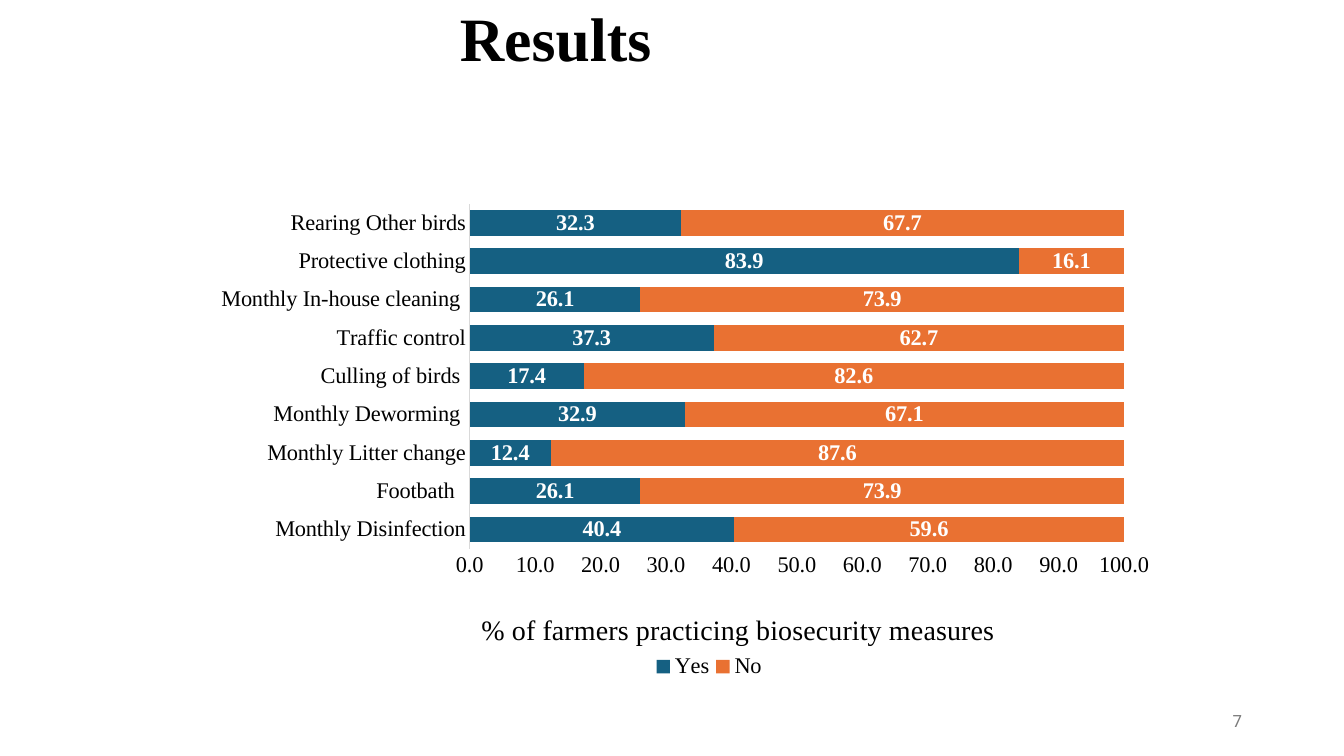
"""Build the results slide with a stacked bar chart of biosecurity practices."""
import dataclasses

import lxml.etree
import pptx
import pptx.chart.data
import pptx.dml.color
import pptx.enum.chart
import pptx.enum.text
import pptx.oxml.ns
import pptx.util
from pptx.util import Cm


@dataclasses.dataclass(frozen=True)
class Theme:
    serif: str = "Times New Roman"
    sans: str = "Roboto"
    black: str = "000000"
    white: str = "FFFFFF"
    grey: str = "797979"
    axis: str = "D9D9D9"
    yes: str = "156082"
    no: str = "E97132"
    heading_size: int = 44
    caption_size: int = 20
    chart_size: int = 16
    number_size: int = 12


theme = Theme()
rgb = pptx.dml.color.RGBColor.from_string


def write(text, frame=None, box=None, align="CENTER", size=theme.chart_size,
          color=theme.black, font=theme.serif, bold=False, spacing=1.0, right=0.25):
    if frame is None:
        frame = slide.shapes.add_textbox(*map(Cm, box)).text_frame
        frame.word_wrap = True
        frame.vertical_anchor = pptx.enum.text.MSO_ANCHOR.MIDDLE
        frame.margin_right = Cm(right)
    paragraph = frame.paragraphs[0]
    paragraph.alignment = getattr(pptx.enum.text.PP_ALIGN, align)
    paragraph.line_spacing = spacing
    run = paragraph.add_run()
    run.text = text
    run.font.name, run.font.bold = font, bold
    run.font.size = pptx.util.Pt(size)
    run.font.color.rgb = rgb(color)


def place(element, index, inner=False, **fractions):
    qn = pptx.oxml.ns.qn
    for old in element.findall(qn("c:layout")):
        element.remove(old)
    layout = lxml.etree.Element(qn("c:layout"))
    manual = lxml.etree.SubElement(layout, qn("c:manualLayout"))
    settings = {"layoutTarget": "inner"} if inner else {}
    settings.update(xMode="edge", yMode="edge", **fractions)
    for tag, value in settings.items():
        lxml.etree.SubElement(manual, qn(f"c:{tag}")).set("val", str(value))
    element.insert(index, layout)


presentation = pptx.Presentation()
presentation.slide_width, presentation.slide_height = Cm(33.87), Cm(19.05)
slide = presentation.slides.add_slide(presentation.slide_layouts[6])

write("Results", box=(0, 0, 29.21, 2.08), size=theme.heading_size, bold=True,
      spacing=0.9, right=1.45)
write("7", box=(23.93, 17.65, 7.62, 1.02), align="RIGHT", size=theme.number_size,
      color=theme.grey, font=theme.sans)

practices = {
    "Monthly Disinfection": (40.4, 59.6),
    "Footbath  ": (26.1, 73.9),
    "Monthly Litter change": (12.4, 87.6),
    "Monthly Deworming ": (32.9, 67.1),
    "Culling of birds ": (17.4, 82.6),
    "Traffic control": (37.3, 62.7),
    "Monthly In-house cleaning ": (26.1, 73.9),
    "Protective clothing": (83.9, 16.1),
    "Rearing Other birds": (32.3, 67.7),
}
answers = pptx.chart.data.CategoryChartData(number_format="0.0")
answers.categories = list(practices)
for answer, shares in zip(("Yes", "No"), zip(*practices.values())):
    answers.add_series(answer, shares)

chart = slide.shapes.add_chart(
    pptx.enum.chart.XL_CHART_TYPE.BAR_STACKED,
    Cm(1.9), Cm(3.78), Cm(27.3), Cm(13.56), answers).chart
chart.font.name = theme.serif
chart.font.size = pptx.util.Pt(theme.chart_size)
chart.font.color.rgb = rgb(theme.black)

chart.has_title = True
write("% of farmers practicing biosecurity measures",
      frame=chart.chart_title.text_frame, size=theme.caption_size)
place(chart.chart_title._element, 1, x=0.37, y=0.85)

chart.has_legend = True
chart.legend.position = pptx.enum.chart.XL_LEGEND_POSITION.BOTTOM
chart.legend.include_in_layout = False
place(chart.legend._element, 1, x=0.53, y=0.93, w=0.11, h=0.06)

plot = chart.plots[0]
plot.gap_width, plot.overlap = 50, 100
plot.vary_by_categories = False
place(chart._chartSpace.find(".//" + pptx.oxml.ns.qn("c:plotArea")), 0, inner=True,
      x=0.364, y=0.1, w=0.604, h=0.641)

for series, color in zip(plot.series, (theme.yes, theme.no)):
    series.format.fill.solid()
    series.format.fill.fore_color.rgb = rgb(color)
    labels = series.data_labels
    labels.show_value = True
    labels.position = pptx.enum.chart.XL_LABEL_POSITION.CENTER
    labels.number_format, labels.number_format_is_linked = "0.0", False
    labels.font.name, labels.font.bold = theme.serif, True
    labels.font.size = pptx.util.Pt(theme.chart_size)
    labels.font.color.rgb = rgb(theme.white)

for axis in (chart.category_axis, chart.value_axis):
    axis.major_tick_mark = axis.minor_tick_mark = pptx.enum.chart.XL_TICK_MARK.NONE
    axis.has_major_gridlines = False
chart.category_axis.format.line.color.rgb = rgb(theme.axis)
chart.category_axis.format.line.width = pptx.util.Pt(0.75)
percent = chart.value_axis
percent.minimum_scale, percent.maximum_scale, percent.major_unit = 0, 100, 10
percent.tick_labels.number_format = "0.0"
percent.tick_labels.number_format_is_linked = False
percent.format.line.fill.background()

presentation.save("out.pptx")
